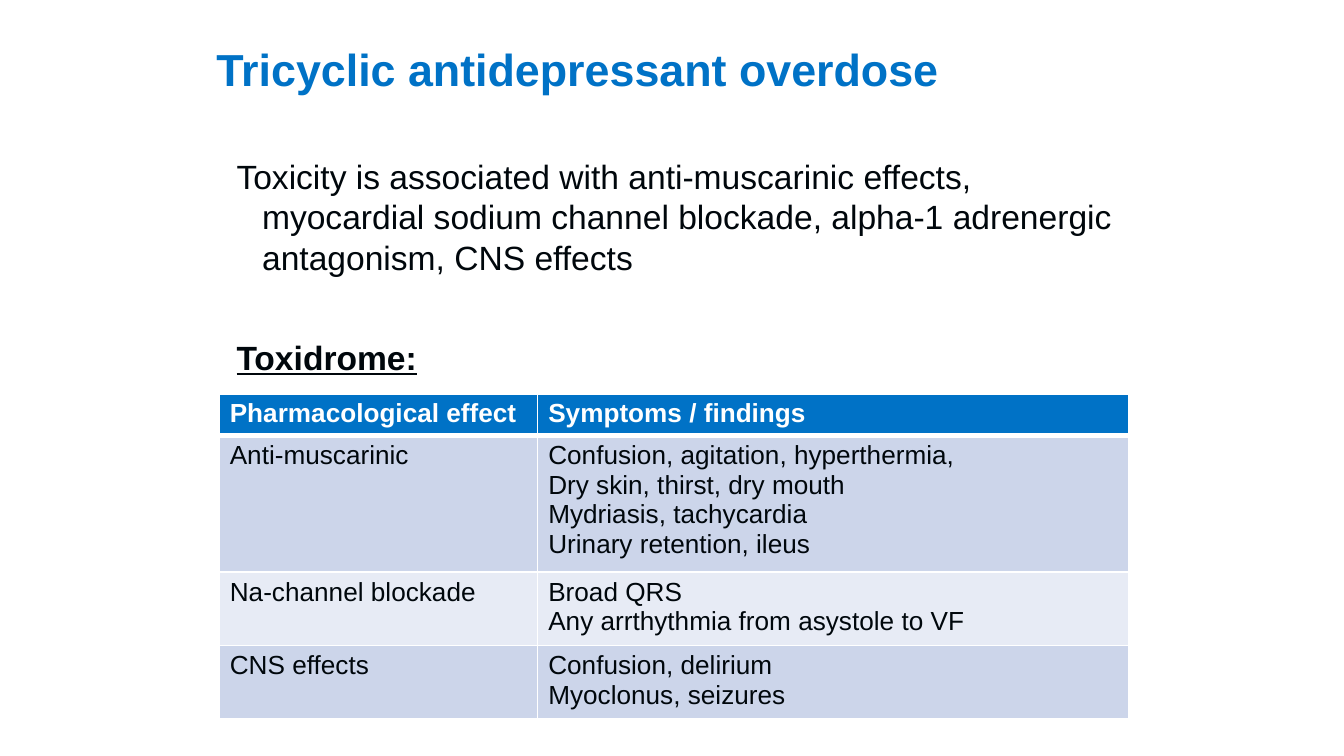
"""Build the tricyclic antidepressant overdose slide."""
from dataclasses import dataclass

import lxml.etree
import pptx
import pptx.dml.color
import pptx.oxml.ns
import pptx.util

Inches = pptx.util.Inches
Pt = pptx.util.Pt
RGBColor = pptx.dml.color.RGBColor

BLUE = RGBColor(0x00, 0x72, 0xC6)
INK = RGBColor(0x00, 0x07, 0x0C)
WHITE = RGBColor(0xFF, 0xFF, 0xFF)
BANDS = (RGBColor(0xCC, 0xD5, 0xEA), RGBColor(0xE7, 0xEB, 0xF5))
FONT = "Arial"
SLIDE_WIDTH = 10
LEFT, WIDTH = 1.61, 6.79


@dataclass(frozen=True)
class Effect:
    """A pharmacological effect with its findings and row height in inches."""

    name: str
    findings: tuple[str, ...]
    height: float


HEADER = Effect("Pharmacological effect", ("Symptoms / findings",), 0.31)
EFFECTS = (
    Effect(
        "Anti-muscarinic",
        (
            "Confusion, agitation, hyperthermia,",
            "Dry skin, thirst, dry mouth",
            "Mydriasis, tachycardia",
            "Urinary retention, ileus",
        ),
        1.01,
    ),
    Effect("Na-channel blockade", ("Broad QRS", "Any arrthythmia from asystole to VF"), 0.54),
    Effect("CNS effects", ("Confusion, delirium", "Myoclonus, seizures"), 0.54),
)
COLUMN_WIDTHS = (2.37, 4.4)


def style_text(frame, size: float, color: RGBColor, bold: bool = False) -> None:
    """Give every run in a text frame the same font."""
    for paragraph in frame.paragraphs:
        for run in paragraph.runs:
            run.font.name = FONT
            run.font.size = Pt(size)
            run.font.bold = bold
            run.font.color.rgb = color


def add_text(slide, top: float, height: float, text: str, spacing: float):
    """Add a wrapped text box without margins and return its frame."""
    frame = slide.shapes.add_textbox(
        Inches(LEFT), Inches(top), Inches(WIDTH), Inches(height)
    ).text_frame
    frame.word_wrap = True
    frame.margin_left = frame.margin_right = frame.margin_top = frame.margin_bottom = 0
    frame.text = text
    for paragraph in frame.paragraphs:
        paragraph.line_spacing = spacing
    return frame


def set_borders(cell, top: float, bottom: float) -> None:
    """Draw white borders, with widths in points, around a cell."""
    qn = pptx.oxml.ns.qn
    properties = cell._tc.get_or_add_tcPr()
    sides = (("a:lnL", 1), ("a:lnR", 1), ("a:lnT", top), ("a:lnB", bottom))
    for position, (side, width) in enumerate(sides):
        line = lxml.etree.Element(qn(side), w=str(Pt(width)))
        fill = lxml.etree.SubElement(line, qn("a:solidFill"))
        lxml.etree.SubElement(fill, qn("a:srgbClr"), val=str(WHITE))
        properties.insert(position, line)


def add_effect_table(slide) -> None:
    """Add the table of effects and findings."""
    rows = (HEADER, *EFFECTS)
    table = slide.shapes.add_table(
        len(rows), len(COLUMN_WIDTHS), Inches(1.63), Inches(2.93),
        Inches(sum(COLUMN_WIDTHS)), Inches(sum(row.height for row in rows)),
    ).table
    for column, width in zip(table.columns, COLUMN_WIDTHS):
        column.width = Inches(width)
    for index, effect in enumerate(rows):
        table.rows[index].height = Inches(effect.height)
        is_header = index == 0
        for column, text in enumerate((effect.name, "\n".join(effect.findings))):
            cell = table.cell(index, column)
            cell.margin_left = cell.margin_right = Inches(0.08)
            cell.margin_top = cell.margin_bottom = Inches(0.04)
            cell.text_frame.text = text
            style_text(cell.text_frame, 14, WHITE if is_header else INK, is_header)
            cell.fill.solid()
            cell.fill.fore_color.rgb = BLUE if is_header else BANDS[(index - 1) % 2]
            set_borders(cell, 3 if index == 1 else 1, 3 if is_header else 1)


def main() -> None:
    """Build and save the slide."""
    presentation = pptx.Presentation()
    presentation.slide_width = Inches(SLIDE_WIDTH)
    presentation.slide_height = Inches(SLIDE_WIDTH * 9 / 16)
    slide = presentation.slides.add_slide(presentation.slide_layouts[6])

    title = add_text(slide, 0.39, 0.69, "Tricyclic antidepressant overdose", 0.8)
    style_text(title, 24, BLUE, True)

    summary = add_text(
        slide, 1.16, 4.13,
        "Toxicity is associated with anti-muscarinic effects, myocardial sodium channel "
        "blockade, alpha-1 adrenergic antagonism, CNS effects\nToxidrome:",
        1.0,
    )
    style_text(summary, 18, INK)
    for paragraph in summary.paragraphs:
        properties = paragraph._p.get_or_add_pPr()
        properties.set("marL", str(Inches(0.34)))
        properties.set("indent", str(Inches(-0.19)))
    toxidrome = summary.paragraphs[1]
    toxidrome.space_before = Pt(32)
    toxidrome.runs[0].font.bold = True
    toxidrome.runs[0].font.underline = True

    add_effect_table(slide)
    presentation.save("out.pptx")


if __name__ == "__main__":
    main()
